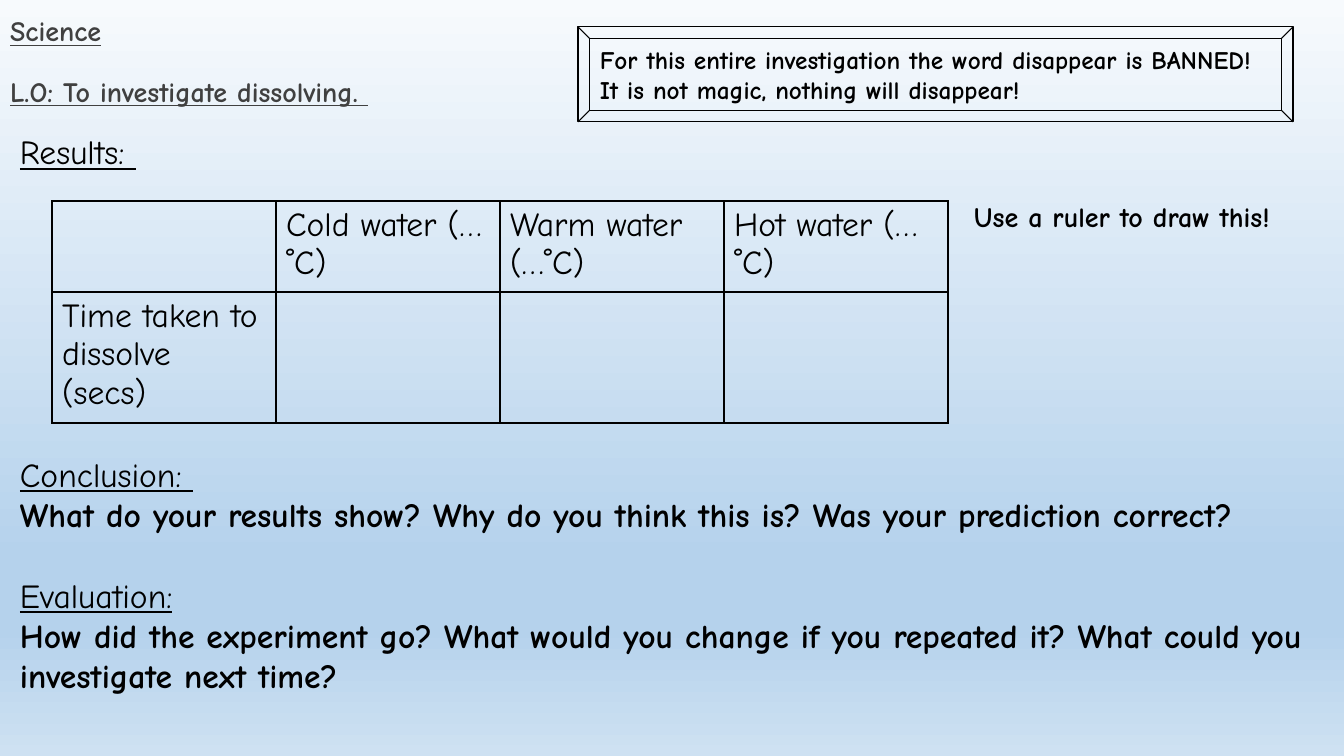
from lxml.etree import SubElement
from pptx import Presentation
from pptx.dml.color import RGBColor
from pptx.enum.shapes import MSO_SHAPE
from pptx.enum.text import MSO_ANCHOR, MSO_AUTO_SIZE, PP_ALIGN
from pptx.oxml.ns import qn
from pptx.util import Emu, Pt

FONT = "Comic Neue"
BLACK = "000000"
BODY_LINE = 28.8
BACKGROUND_STOPS = [(0, "F7FAFD"), (74, "B5D2EC"), (83, "B5D2EC"), (100, "CEE1F2")]
RESULTS_TABLE = [
    ["", "Cold water (…˚C)", "Warm water (…˚C)", "Hot water (…˚C)"],
    ["Time taken to dissolve (secs)", "", "", ""],
]


def px(length):
    return Emu(round(length * 914400 / 100.8))


def color(hex_string):
    return RGBColor.from_string(hex_string)


def write(paragraph, text, size=24, hex_color=BLACK, bold=False, underline=False,
          before=0, spacing=1.0):
    paragraph.alignment = PP_ALIGN.LEFT
    paragraph.space_before = Pt(before)
    paragraph.line_spacing = spacing
    paragraph.font.size = Pt(size)
    if not text:
        return
    run = paragraph.add_run()
    run.text = text
    font = run.font
    font.name, font.size = FONT, Pt(size)
    font.bold, font.underline = bold, underline
    font.color.rgb = color(hex_color)


def write_lines(frame, lines):
    """Write (text, format) pairs, one paragraph each."""
    for index, (text, text_format) in enumerate(lines):
        paragraph = frame.add_paragraph() if index else frame.paragraphs[0]
        write(paragraph, text, **text_format)


def paint_background(slide):
    fill = slide.background.fill
    fill.gradient()
    fill.gradient_angle = 270
    stop_list = slide.element.find(".//" + qn("a:gsLst"))
    for stop in list(stop_list):
        stop_list.remove(stop)
    for percent, hex_color in BACKGROUND_STOPS:
        stop = SubElement(stop_list, qn("a:gs"), pos=str(percent * 1000))
        SubElement(stop, qn("a:srgbClr"), val=hex_color)


def add_title(slide):
    title = slide.shapes.title
    title.left, title.top, title.width, title.height = px(0), px(0), px(535), px(126)
    frame = title.text_frame
    frame.word_wrap = True
    frame.auto_size = MSO_AUTO_SIZE.NONE
    frame.vertical_anchor = MSO_ANCHOR.MIDDLE
    heading = dict(size=20, hex_color="404040", bold=True, underline=True, spacing=0.9)
    write_lines(frame, [
        ("Science", heading),
        ("L.O: To investigate dissolving. ", dict(heading, before=21.6)),
    ])


def add_text(slide, left, top, width, height, lines, wrap=True):
    box = slide.shapes.add_textbox(px(left), px(top), px(width), px(height))
    box.text_frame.word_wrap = wrap
    write_lines(box.text_frame, lines)


def add_bevel(slide, left, top, width, height, text):
    bevel = slide.shapes.add_shape(
        MSO_SHAPE.BEVEL, px(left), px(top), px(width), px(height))
    bevel.shadow.inherit = False
    bevel.fill.background()
    bevel.line.color.rgb = color(BLACK)
    bevel.line.width = Pt(0.75)
    bevel.text_frame.word_wrap = True
    bevel.text_frame.vertical_anchor = MSO_ANCHOR.MIDDLE
    write(bevel.text_frame.paragraphs[0], text, size=18, bold=True)


def outline_cell(cell):
    properties = cell._tc.get_or_add_tcPr()
    for side in ("a:lnL", "a:lnR", "a:lnT", "a:lnB"):
        line = SubElement(properties, qn(side), w=str(Pt(1)))
        line_fill = SubElement(line, qn("a:solidFill"))
        SubElement(line_fill, qn("a:srgbClr"), val=BLACK)


def add_table(slide, left, top, column_width, row_heights, rows):
    column_count = len(rows[0])
    table = slide.shapes.add_table(
        len(rows), column_count, px(left), px(top),
        px(column_width * column_count), px(sum(row_heights))).table
    table.first_row = table.horz_banding = False
    for column in table.columns:
        column.width = px(column_width)
    for row, height, texts in zip(table.rows, row_heights, rows):
        row.height = px(height)
        for cell, text in zip(row.cells, texts):
            outline_cell(cell)
            cell.fill.background()
            write(cell.text_frame.paragraphs[0], text)


def main():
    presentation = Presentation()
    presentation.slide_width, presentation.slide_height = px(1344), px(756)
    slide = presentation.slides.add_slide(presentation.slide_layouts[5])
    paint_background(slide)
    add_title(slide)
    add_text(slide, 10, 126, 1307, 703, [
        ("Results: ", dict(underline=True)),
        ("Conclusion: ", dict(underline=True, before=7 * BODY_LINE)),
        ("What do your results show? Why do you think this is? "
         "Was your prediction correct?", dict(bold=True)),
        ("Evaluation:", dict(underline=True, before=BODY_LINE)),
        ("How did the experiment go? What would you change if you repeated it? "
         "What could you investigate next time?", dict(bold=True)),
    ])
    add_bevel(slide, 578, 27, 715, 95,
              "For this entire investigation the word disappear is BANNED! "
              "It is not magic, nothing will disappear!")
    add_table(slide, 52, 201, 224, [91, 131], RESULTS_TABLE)
    add_text(slide, 964, 195, 364, 44,
             [("Use a ruler to draw this!", dict(size=20, bold=True))], wrap=False)
    presentation.save("out.pptx")


if __name__ == "__main__":
    main()
